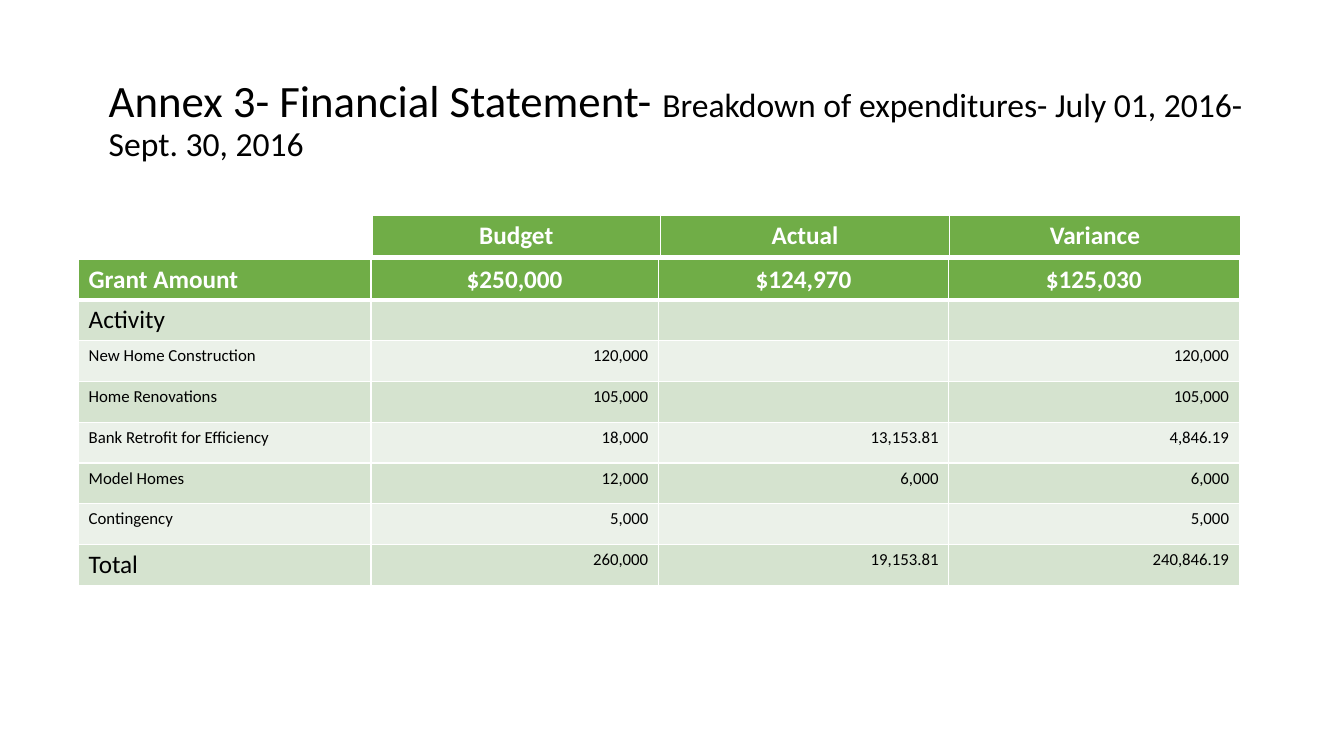
import lxml.etree
import pptx
import pptx.dml.color
import pptx.enum.text
import pptx.oxml.ns
import pptx.util
from pptx.util import Inches

WHITE = pptx.dml.color.RGBColor(0xFF, 0xFF, 0xFF)
BLACK = pptx.dml.color.RGBColor(0x00, 0x00, 0x00)
GREEN = pptx.dml.color.RGBColor(0x70, 0xAD, 0x47)
BAND_DARK = pptx.dml.color.RGBColor(0xD5, 0xE3, 0xCF)
BAND_LIGHT = pptx.dml.color.RGBColor(0xEB, 0xF1, 0xE9)

FONT = "Calibri"
ROW_HEIGHT = 0.405
ALIGN = pptx.enum.text.PP_ALIGN

COLUMN_HEADINGS = [["Budget", "Actual", "Variance"]]
EXPENDITURES = [
    ["Grant Amount", "$250,000", "$124,970", "$125,030"],
    ["Activity", "", "", ""],
    ["New Home Construction", "120,000", "", "120,000"],
    ["Home Renovations", "105,000", "", "105,000"],
    ["Bank Retrofit for Efficiency", "18,000", "13,153.81", "4,846.19"],
    ["Model Homes", "12,000", "6,000", "6,000"],
    ["Contingency", "5,000", "", "5,000"],
    ["Total", "260,000", "19,153.81", "240,846.19"],
]
LARGE_LABELS = ("Activity", "Total")


def format_font(font, size, color, bold=False):
    font.name = FONT
    font.size = pptx.util.Pt(size)
    font.color.rgb = color
    font.bold = bold


def add_title(slide, heading, period):
    title = slide.shapes.add_textbox(
        Inches(0.98), Inches(0.48), Inches(11.5), Inches(1.45))
    frame = title.text_frame
    frame.word_wrap = True
    frame.vertical_anchor = pptx.enum.text.MSO_ANCHOR.MIDDLE
    paragraph = frame.paragraphs[0]
    paragraph.line_spacing = 0.9
    for text, size in ((heading, 32), (period, 24)):
        run = paragraph.add_run()
        run.text = text
        format_font(run.font, size, BLACK)


def set_borders(cell, bottom_width):
    """Draw white cell borders; they must precede the fill in the cell XML."""
    properties = cell._tc.get_or_add_tcPr()
    widths = {"a:lnL": 1, "a:lnR": 1, "a:lnT": 1, "a:lnB": bottom_width}
    for position, (side, width) in enumerate(widths.items()):
        border = lxml.etree.Element(
            pptx.oxml.ns.qn(side), w=str(pptx.util.Pt(width)))
        fill = lxml.etree.SubElement(border, pptx.oxml.ns.qn("a:solidFill"))
        lxml.etree.SubElement(fill, pptx.oxml.ns.qn("a:srgbClr"), val=str(WHITE))
        properties.insert(position, border)


def fill_cell(cell, text, fill, size, color, bold, alignment):
    cell.fill.solid()
    cell.fill.fore_color.rgb = fill
    set_borders(cell, 3 if fill == GREEN else 1)
    cell.text_frame.text = text
    paragraph = cell.text_frame.paragraphs[0]
    paragraph.alignment = alignment
    format_font(paragraph.font, size, color, bold)
    for run in paragraph.runs:
        format_font(run.font, size, color, bold)


def add_financial_table(slide, left, top, widths, rows, has_labels):
    """Add a table with a green first row and banded rows below it."""
    table = slide.shapes.add_table(
        len(rows), len(widths), Inches(left), Inches(top),
        Inches(sum(widths)), Inches(ROW_HEIGHT * len(rows))).table
    for column, width in zip(table.columns, widths):
        column.width = Inches(width)
    for r, values in enumerate(rows):
        table.rows[r].height = Inches(ROW_HEIGHT)
        for c, text in enumerate(values):
            is_label = has_labels and c == 0
            if r == 0:
                alignment = ALIGN.LEFT if is_label else ALIGN.CENTER
                style = (GREEN, 18, WHITE, True)
            else:
                alignment = ALIGN.LEFT if is_label else ALIGN.RIGHT
                size = 18 if text in LARGE_LABELS else 12
                style = (BAND_DARK if r % 2 else BAND_LIGHT, size, BLACK, False)
            fill_cell(table.cell(r, c), text, *style, alignment)


def main():
    presentation = pptx.Presentation()
    presentation.slide_width = Inches(13.33)
    presentation.slide_height = Inches(7.5)
    slide = presentation.slides.add_slide(presentation.slide_layouts[6])

    add_title(slide, "Annex 3- Financial Statement- ",
              "Breakdown of expenditures- July 01, 2016- Sept. 30, 2016")
    add_financial_table(slide, 0.78, 2.57, [2.9, 2.85, 2.88, 2.88],
                        EXPENDITURES, has_labels=True)
    add_financial_table(slide, 3.69, 2.14, [2.86, 2.87, 2.88],
                        COLUMN_HEADINGS, has_labels=False)
    presentation.save("out.pptx")


if __name__ == "__main__":
    main()
